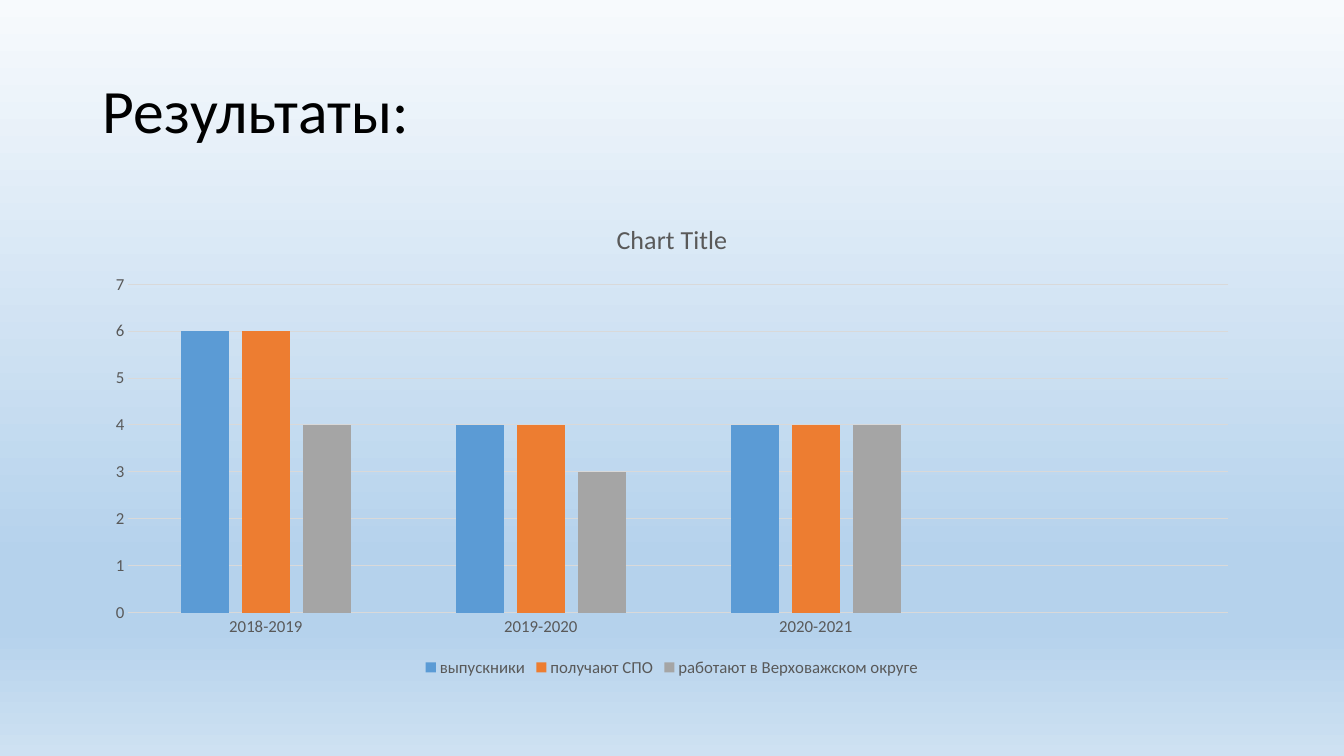
from lxml import etree
from pptx import Presentation
from pptx.chart.data import CategoryChartData
from pptx.dml.color import RGBColor
from pptx.enum.chart import XL_CHART_TYPE, XL_LEGEND_POSITION, XL_TICK_MARK
from pptx.enum.text import MSO_ANCHOR, PP_ALIGN
from pptx.oxml.ns import qn
from pptx.util import Inches, Pt

COLUMNS = XL_CHART_TYPE.COLUMN_CLUSTERED
LEGEND_BOTTOM = XL_LEGEND_POSITION.BOTTOM
NO_TICKS = XL_TICK_MARK.NONE
MIDDLE = MSO_ANCHOR.MIDDLE
LEFT = PP_ALIGN.LEFT

FONT = "Calibri"
BLACK = RGBColor(0x00, 0x00, 0x00)
GRAY_TEXT = RGBColor(0x59, 0x59, 0x59)
GRID_LINE = RGBColor(0xD9, 0xD9, 0xD9)
PALE = RGBColor(0xF7, 0xFA, 0xFD)
SKY = RGBColor(0xB5, 0xD2, 0xEC)
MIST = RGBColor(0xCE, 0xE1, 0xF2)
BLUE = RGBColor(0x5B, 0x9B, 0xD5)
ORANGE = RGBColor(0xED, 0x7D, 0x31)
GRAY = RGBColor(0xA5, 0xA5, 0xA5)

SLIDE_WIDTH, SLIDE_HEIGHT = Inches(13.33), Inches(7.5)
MARGIN = Inches(0.92)
CONTENT_WIDTH = SLIDE_WIDTH - 2 * MARGIN

BACKGROUND_STOPS = [(0, PALE), (74, SKY), (83, SKY), (100, MIST)]
# The last category is left empty
YEARS = ["2018-2019", "2019-2020", "2020-2021", ""]
RESULTS = [
    ("выпускники", (6, 4, 4, None), BLUE),
    ("получают СПО", (6, 4, 4, None), ORANGE),
    ("работают в Верховажском округе", (4, 3, 4, None), GRAY),
]


def set_font(font, size, color):
    font.name = FONT
    font.size = Pt(size)
    font.bold = False
    font.color.rgb = color


def set_line(line, color):
    line.color.rgb = color
    line.width = Pt(0.75)


def paint_background(slide, stops):
    """Fill the background with a gradient running from top to bottom."""
    fill = slide.background.fill
    fill.gradient()
    fill.gradient_angle = 270
    stop_list = next(slide.background._cSld.iter(qn("a:gsLst")))
    for old_stop in list(stop_list):
        stop_list.remove(old_stop)
    for percent, color in stops:
        stop = etree.SubElement(stop_list, qn("a:gs"), pos=str(percent * 1000))
        etree.SubElement(stop, qn("a:srgbClr"), val=str(color))


def add_title(slide, text):
    title = slide.shapes.title
    title.left, title.top = MARGIN, Inches(0.4)
    title.width, title.height = CONTENT_WIDTH, Inches(1.45)
    title.text_frame.text = text
    title.text_frame.vertical_anchor = MIDDLE
    paragraph = title.text_frame.paragraphs[0]
    paragraph.alignment = LEFT
    paragraph.line_spacing = 0.9
    set_font(paragraph.font, 44, BLACK)


def format_axes(chart):
    for axis in (chart.category_axis, chart.value_axis):
        axis.major_tick_mark = axis.minor_tick_mark = NO_TICKS
        set_font(axis.tick_labels.font, 12, GRAY_TEXT)
    set_line(chart.category_axis.format.line, GRID_LINE)
    value_axis = chart.value_axis
    value_axis.minimum_scale, value_axis.maximum_scale = 0, 7
    value_axis.major_unit = 1
    value_axis.format.line.fill.background()
    set_line(value_axis.major_gridlines.format.line, GRID_LINE)


def add_results_chart(slide, title):
    data = CategoryChartData()
    data.categories = YEARS
    for name, values, _ in RESULTS:
        data.add_series(name, values)
    chart = slide.shapes.add_chart(
        COLUMNS, MARGIN, Inches(2), CONTENT_WIDTH, Inches(4.76), data
    ).chart
    set_font(chart.font, 10, BLACK)

    chart.has_title = True
    chart.chart_title.include_in_layout = False
    chart.chart_title.text_frame.text = title
    set_font(chart.chart_title.text_frame.paragraphs[0].font, 18.6, GRAY_TEXT)

    chart.has_legend = True
    chart.legend.position = LEGEND_BOTTOM
    chart.legend.include_in_layout = False
    set_font(chart.legend.font, 12, GRAY_TEXT)
    format_axes(chart)

    plot = chart.plots[0]
    plot.gap_width, plot.overlap = 219, -27
    plot.vary_by_categories = False
    for series, (_, _, color) in zip(plot.series, RESULTS):
        series.format.fill.solid()
        series.format.fill.fore_color.rgb = color


def main():
    presentation = Presentation()
    presentation.slide_width = SLIDE_WIDTH
    presentation.slide_height = SLIDE_HEIGHT
    title_only = presentation.slide_layouts[5]
    slide = presentation.slides.add_slide(title_only)
    paint_background(slide, BACKGROUND_STOPS)
    add_title(slide, "Результаты:")
    add_results_chart(slide, "Chart Title")
    presentation.save("out.pptx")


if __name__ == "__main__":
    main()
